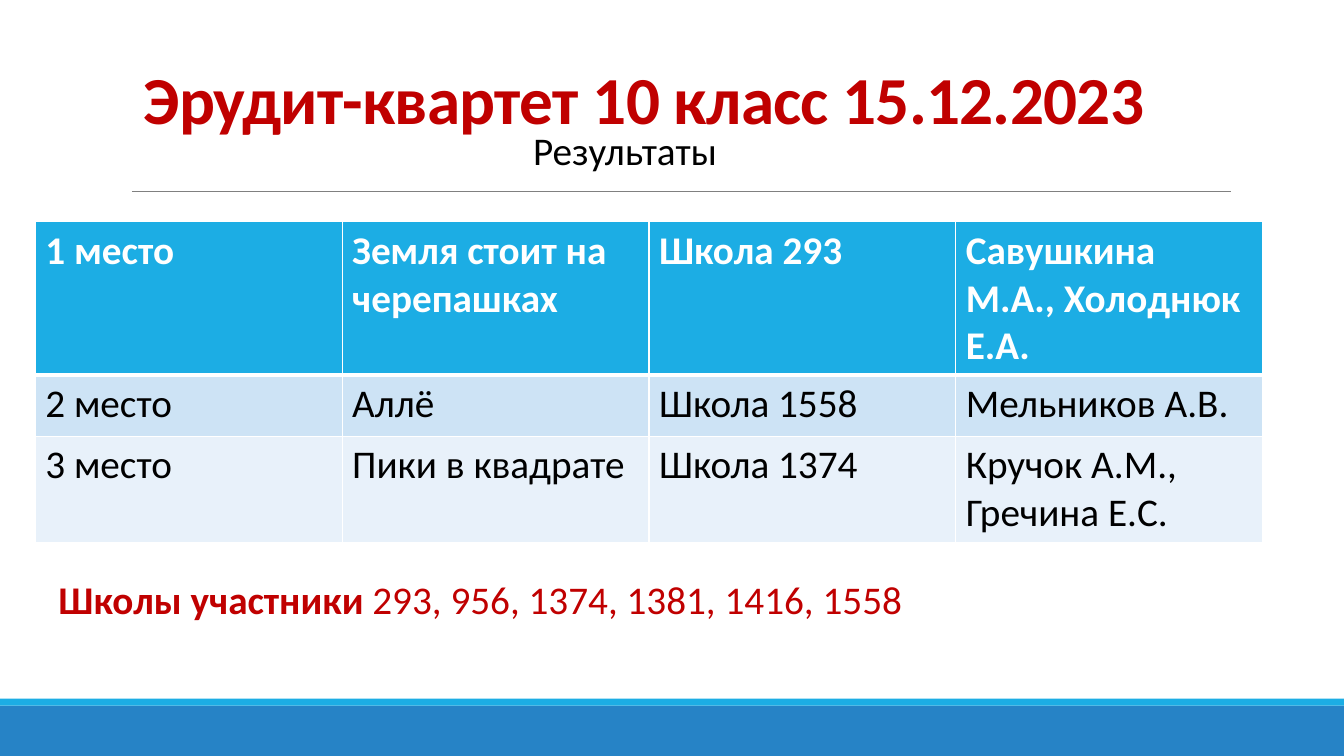
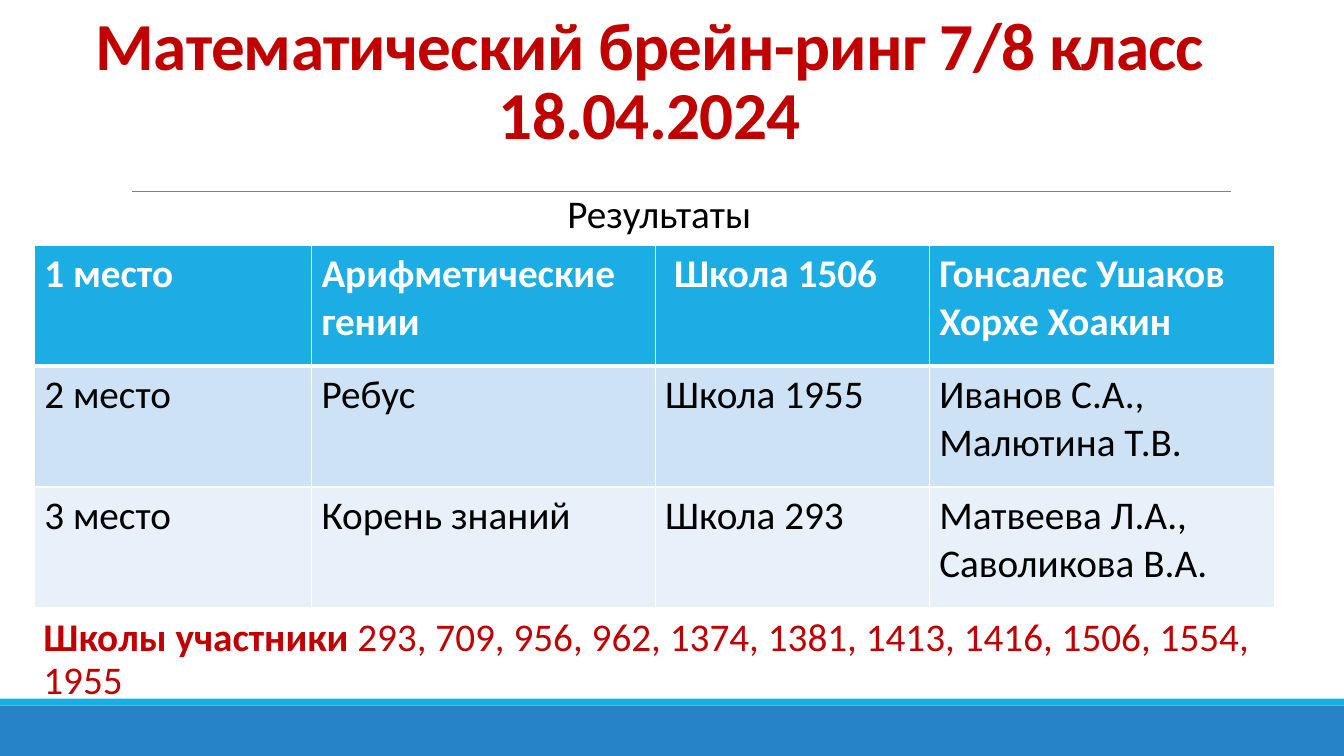
from dataclasses import dataclass

from lxml.etree import SubElement
from pptx import Presentation
from pptx.dml.color import RGBColor
from pptx.enum.shapes import MSO_CONNECTOR, MSO_SHAPE
from pptx.enum.text import MSO_ANCHOR, PP_ALIGN
from pptx.oxml.ns import qn
from pptx.slide import Slide
from pptx.table import _Cell
from pptx.text.text import TextFrame, _Paragraph
from pptx.util import Pt

WHITE = RGBColor(0xFF, 0xFF, 0xFF)
BLACK = RGBColor(0, 0, 0)
RED = RGBColor(0xC0, 0, 0)
GREY = RGBColor(0x80, 0x80, 0x80)
CYAN = RGBColor(0x1C, 0xAD, 0xE4)
BLUE = RGBColor(0x26, 0x83, 0xC6)
ROW_FILLS = (CYAN, RGBColor(0xCD, 0xE3, 0xF5), RGBColor(0xE8, 0xF1, 0xFA))

FONT = "Calibri"
TITLE_SIZE, TEXT_SIZE = 48, 28
THIN, THICK = 0.96, 3
WIDTH, HEIGHT = 960, 540


@dataclass(frozen=True)
class Box:
    left: float
    top: float
    width: float
    height: float

    def lengths(self) -> tuple[Pt, Pt, Pt, Pt]:
        return Pt(self.left), Pt(self.top), Pt(self.width), Pt(self.height)


@dataclass(frozen=True)
class Band:
    box: Box
    color: RGBColor


@dataclass(frozen=True)
class Contest:
    title: str
    title_box: Box
    subtitle_box: Box
    schools: str
    schools_box: Box
    table_left: float
    table_top: float
    columns: tuple[float, ...]
    rows: tuple[float, ...]
    places: tuple[tuple[str, ...], ...]


BANDS = (
    Band(Box(0, 504, WIDTH, 36), BLUE),
    Band(Box(0, 499, WIDTH, 5), CYAN),
)

CONTESTS = (
    Contest(
        title="Эрудит-квартет 10 класс 15.12.2023",
        title_box=Box(9.4, 11.5, 901.4, 90.7),
        subtitle_box=Box(32.4, 90.7, 828, 64.8),
        schools="293, 956, 1374, 1381, 1416, 1558",
        schools_box=Box(41.8, 411.1, 828, 40.3),
        table_left=25.2,
        table_top=158.4,
        columns=(219.2,) * 4,
        rows=(109.5, 43.9, 75.6),
        places=(
            ("1 место", "Земля стоит на черепашках", "Школа 293",
             "Савушкина М.А., Холоднюк Е.А."),
            ("2 место", "Аллё", "Школа 1558", "Мельников А.В."),
            ("3 место", "Пики в квадрате", "Школа 1374",
             "Кручок А.М., Гречина Е.С."),
        ),
    ),
    Contest(
        title="Математический брейн-ринг 7/8 класс 18.04.2024",
        title_box=Box(16.6, 8.6, 895, 104.4),
        subtitle_box=Box(56.9, 135.4, 828, 64.8),
        schools="293, 709, 956, 962, 1374, 1381, 1413, 1416, 1506, 1554, 1955",
        schools_box=Box(31, 437.8, 879.8, 63.4),
        table_left=24.5,
        table_top=175,
        columns=(198, 245.5, 195.8, 247),
        rows=(86.4,) * 3,
        places=(
            ("1 место", "Арифметические гении", " Школа 1506",
             "Гонсалес Ушаков Хорхе Хоакин"),
            ("2 место", "Ребус", "Школа 1955", "Иванов С.А., Малютина Т.В."),
            ("3 место", "Корень знаний", "Школа 293",
             "Матвеева Л.А., Саволикова В.А."),
        ),
    ),
)


def set_font(p: _Paragraph, size: float, color: RGBColor) -> None:
    p.font.name = FONT
    p.font.size = Pt(size)
    p.font.color.rgb = color


def add_text_frame(slide: Slide, box: Box) -> TextFrame:
    tf = slide.shapes.add_textbox(*box.lengths()).text_frame
    tf.word_wrap = True
    return tf


def add_frame(slide: Slide) -> None:
    rule = slide.shapes.add_connector(
        MSO_CONNECTOR.STRAIGHT, Pt(94.3), Pt(136.8), Pt(879.1), Pt(136.8))
    rule.line.color.rgb = GREY
    rule.line.width = Pt(0.5)
    SubElement(rule._element.spPr, qn("a:effectLst"))
    for band in BANDS:
        sp = slide.shapes.add_shape(MSO_SHAPE.RECTANGLE, *band.box.lengths())
        sp.shadow.inherit = False
        sp.fill.solid()
        sp.fill.fore_color.rgb = band.color
        sp.line.fill.background()


def add_title(slide: Slide, text: str, box: Box) -> None:
    tf = add_text_frame(slide, box)
    tf.vertical_anchor = MSO_ANCHOR.BOTTOM
    p = tf.paragraphs[0]
    p.alignment = PP_ALIGN.CENTER
    p.line_spacing = 0.85
    set_font(p, TITLE_SIZE, RED)
    p.font.bold = True
    r = p.add_run()
    r.text = text
    r._r.get_or_add_rPr().set("spc", "-50")


def add_subtitle(slide: Slide, box: Box) -> None:
    p = add_text_frame(slide, box).paragraphs[0]
    p.text = "Результаты"
    p.alignment = PP_ALIGN.CENTER
    p.line_spacing = 0.9
    set_font(p, TEXT_SIZE, BLACK)


def add_schools(slide: Slide, schools: str, box: Box) -> None:
    tf = add_text_frame(slide, box)
    tf.margin_left = tf.margin_right = Pt(0)
    p = tf.paragraphs[0]
    p.line_spacing = 0.9
    set_font(p, TEXT_SIZE, RED)
    for text, bold in (("Школы участники ", True), (schools, False)):
        r = p.add_run()
        r.text = text
        r.font.bold = bold


def set_borders(cell: _Cell, top: float, bottom: float) -> None:
    tc_pr = cell._tc.get_or_add_tcPr()
    for side, width in (("L", THIN), ("R", THIN), ("T", top), ("B", bottom)):
        ln = SubElement(tc_pr, qn(f"a:ln{side}"), w=str(Pt(width)))
        fill = SubElement(ln, qn("a:solidFill"))
        SubElement(fill, qn("a:srgbClr"), val=str(WHITE))


def add_places(slide: Slide, contest: Contest) -> None:
    box = Box(contest.table_left, contest.table_top,
              sum(contest.columns), sum(contest.rows))
    table = slide.shapes.add_table(
        len(contest.rows), len(contest.columns), *box.lengths()).table
    table.horz_banding = False
    for column, width in zip(table.columns, contest.columns):
        column.width = Pt(width)
    for i, (row, height) in enumerate(zip(table.rows, contest.rows)):
        row.height = Pt(height)
        header = i == 0
        for cell, text in zip(row.cells, contest.places[i]):
            set_borders(cell, top=THICK if i == 1 else THIN,
                        bottom=THICK if header else THIN)
            cell.fill.solid()
            cell.fill.fore_color.rgb = ROW_FILLS[i]
            p = cell.text_frame.paragraphs[0]
            p.text = text
            set_font(p, TEXT_SIZE, WHITE if header else BLACK)
            p.font.bold = header


def main() -> None:
    prs = Presentation()
    prs.slide_width, prs.slide_height = Pt(WIDTH), Pt(HEIGHT)
    for contest in CONTESTS:
        slide = prs.slides.add_slide(prs.slide_layouts[6])
        add_frame(slide)
        add_title(slide, contest.title, contest.title_box)
        add_schools(slide, contest.schools, contest.schools_box)
        add_places(slide, contest)
        add_subtitle(slide, contest.subtitle_box)
    prs.save("out.pptx")


if __name__ == "__main__":
    main()
